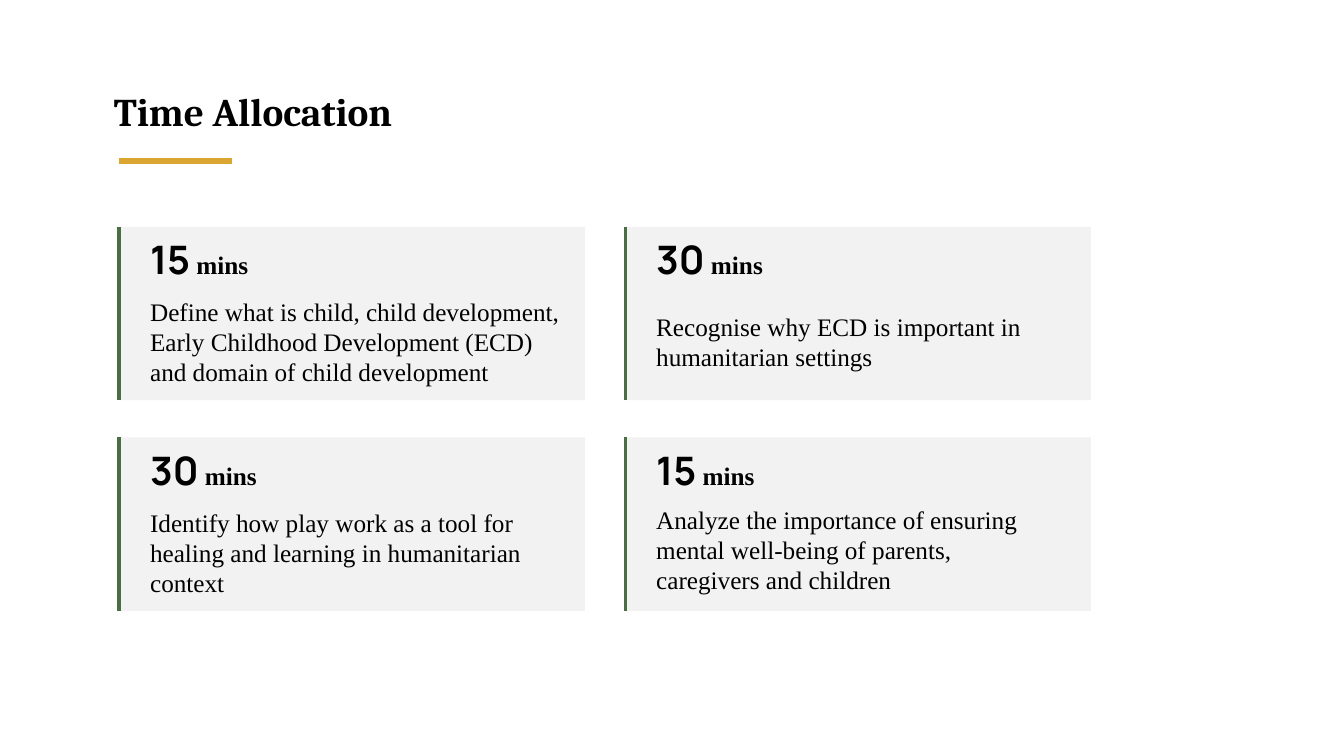
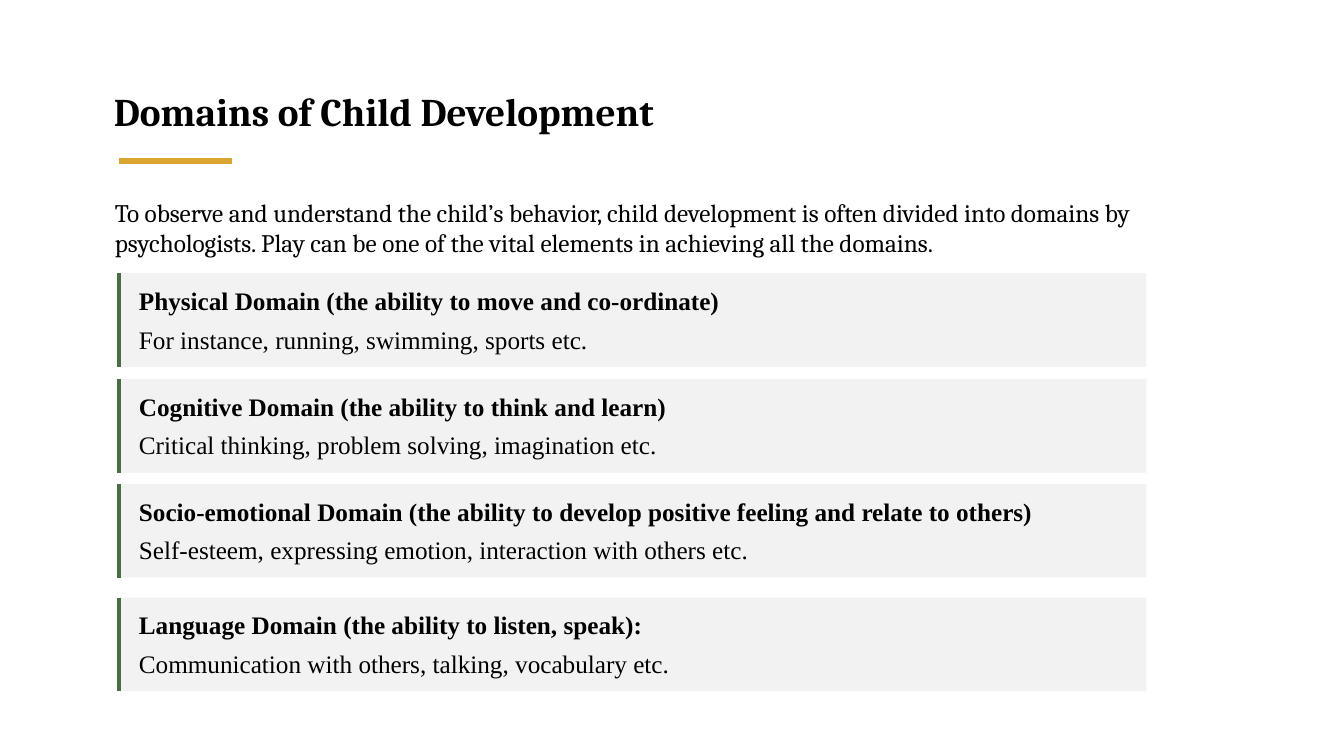
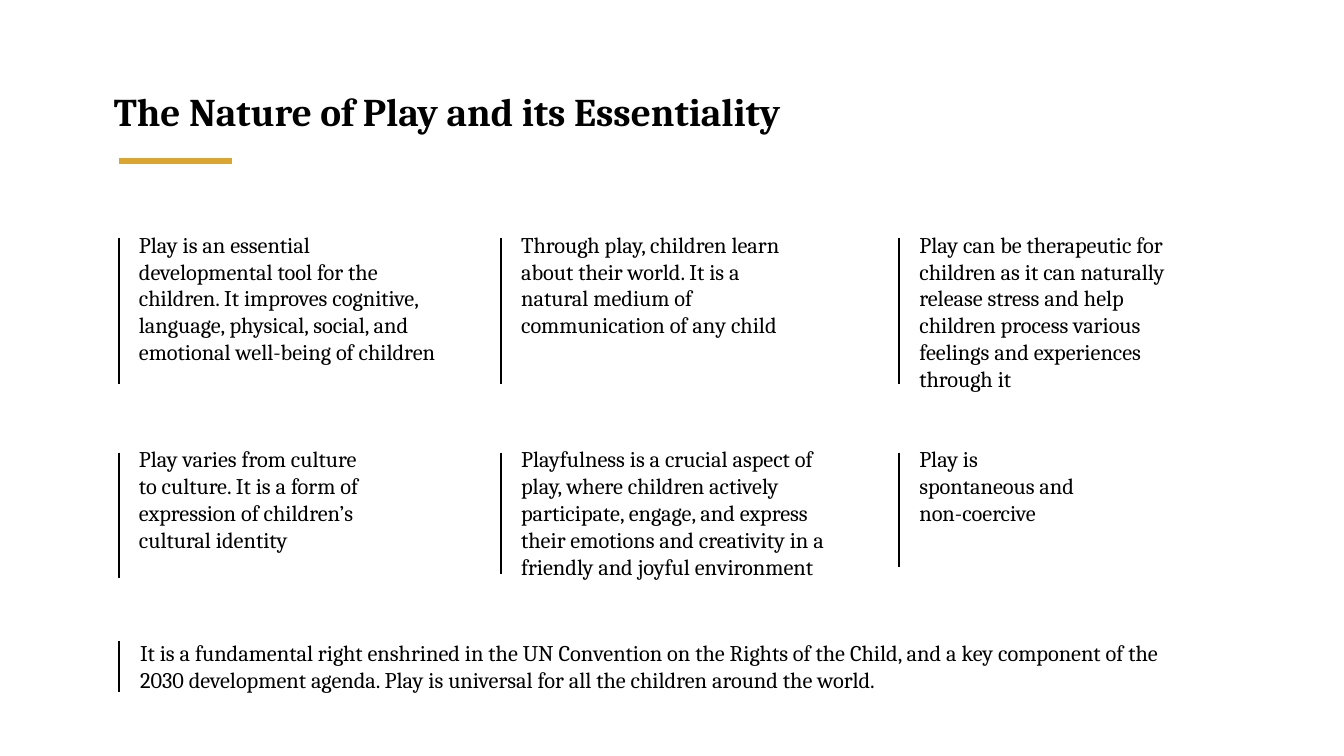
from dataclasses import dataclass

from lxml import etree
from pptx import Presentation
from pptx.dml.color import RGBColor
from pptx.enum import shapes, text
from pptx.oxml import ns
from pptx.util import Inches, Pt


@dataclass(frozen=True)
class Theme:
    ink: str = "000000"
    panel: str = "F2F2F2"
    green: str = "4A6E44"
    gold: str = "DAA531"
    serif: str = "Cambria"
    body: str = "Times New Roman"
    number: str = "Manrope"
    title_size: float = 28
    body_size: float = 18
    note_size: float = 16
    gold_width: float = 4.5
    edge_width: float = 2.25
    rule_width: float = 1.5
    left: float = 1.18


T = Theme()

ALLOCATIONS = [  # minutes, task, text offset in card, text width, text height
    ("15", "Define what is child, child development, Early Childhood "
     "Development (ECD) and domain of child development", 0.64, 4.41, 1.01),
    ("30", "Recognise why ECD is important in humanitarian settings",
     0.79, 4.41, 0.71),
    ("30", "Identify how play work as a tool for healing and learning in "
     "humanitarian context", 0.64, 4.41, 1.01),
    ("15", "Analyze the importance of ensuring mental well-being of parents, "
     "caregivers and children", 0.61, 4.15, 1.01),
]

DOMAINS = [  # top, text width, heading, examples
    (2.71, 6.12, "Physical Domain (the ability to move and co-ordinate)",
     "For instance, running, swimming, sports etc."),
    (3.76, 9.83, "Cognitive Domain (the ability to think and learn)",
     "Critical thinking, problem solving, imagination etc."),
    (4.8, 9.83, "Socio-emotional Domain (the ability to develop positive "
     "feeling and relate to others)",
     "Self-esteem, expressing emotion, interaction with others etc."),
    (5.93, 9.83, "Language Domain (the ability to listen, speak):",
     "Communication with others, talking, vocabulary etc."),
]

PLAY_NOTES = [  # rule height, text width, text height, note
    (1.45, 3.14, 1.82, "Play is an essential developmental tool for the "
     "children. It improves cognitive, language, physical, social, and "
     "emotional well-being of children"),
    (1.45, 3.02, 1.28, "Through play, children learn about their world. It is "
     "a natural medium of communication of any child"),
    (1.45, 3.02, 1.82, "Play can be therapeutic for children as it can "
     "naturally release stress and help children process various feelings "
     "and experiences through it"),
    (1.24, 2.41, 1.55, "Play varies from culture to culture. It is a form of "
     "expression of children’s cultural identity"),
    (1.2, 3.51, 1.55, "Playfulness is a crucial aspect of play, where children "
     "actively participate, engage, and express their emotions and "
     "creativity in a friendly and joyful environment"),
    (1.14, 1.93, 1.01, "Play is spontaneous and non-coercive"),
]


def add_run(p, words, font=T.body, size=T.body_size, bold=False, color=T.ink):
    r = p.add_run()
    r.text = words
    r.font.name = font
    r.font.size = Pt(size)
    r.font.bold = bold
    r.font.color.rgb = RGBColor.from_string(color)


def prepare_frame(tf, inset=0.05):
    tf.word_wrap = True
    tf.auto_size = text.MSO_AUTO_SIZE.SHAPE_TO_FIT_TEXT
    tf.vertical_anchor = text.MSO_ANCHOR.TOP
    tf.margin_left = tf.margin_right = Inches(0.1)
    tf.margin_top = tf.margin_bottom = Inches(inset)
    return tf.paragraphs[0]


def add_box(slide, left, top, width, height, inset=0.05):
    """Add an empty text box and return its text frame."""
    sp = slide.shapes.add_textbox(*map(Inches, (left, top, width, height)))
    prepare_frame(sp.text_frame, inset)
    return sp.text_frame


def add_line(slide, x1, y1, x2, y2, color, width):
    line = slide.shapes.add_connector(
        shapes.MSO_CONNECTOR.STRAIGHT, *map(Inches, (x1, y1, x2, y2)))
    line.line.color.rgb = RGBColor.from_string(color)
    line.line.width = Pt(width)
    etree.SubElement(line._element.spPr, ns.qn("a:effectLst"))


def add_panel(slide, left, top, width, height):
    """Add a grey panel with a green left edge."""
    sp = slide.shapes.add_shape(
        shapes.MSO_SHAPE.RECTANGLE, *map(Inches, (left, top, width, height)))
    sp.shadow.inherit = False
    sp.fill.solid()
    sp.fill.fore_color.rgb = RGBColor.from_string(T.panel)
    sp.line.fill.background()
    add_line(slide, left, top, left, top + height, T.green, T.edge_width)


def add_titled_slide(prs, title):
    slide = prs.slides.add_slide(prs.slide_layouts[5])
    sp = slide.shapes.title
    sp.left, sp.top, sp.width, sp.height = map(Inches, (1.03, 0.82, 9.03, 0.57))
    p = prepare_frame(sp.text_frame)
    p.alignment = text.PP_ALIGN.LEFT
    add_run(p, title, font=T.serif, size=T.title_size, bold=True)
    add_line(slide, T.left, 1.6, T.left + 1.12, 1.6, T.gold, T.gold_width)
    return slide


def add_time_card(slide, left, top, minutes, task, offset, width, height):
    add_panel(slide, left, top, 4.62, 1.72)
    tf = add_box(slide, left + 0.21, top + offset, width, height)
    add_run(tf.paragraphs[0], task)
    p = add_box(slide, left + 0.21, top + 0.04, 1.37, 0.57).paragraphs[0]
    add_run(p, minutes, font=T.number, size=T.title_size, bold=True)
    add_run(p, " mins", bold=True)


def add_domain(slide, top, width, heading, examples):
    add_panel(slide, T.left, top, 10.19, 0.93)
    tf = add_box(slide, T.left + 0.1, top + 0.07, width, 0.79)
    add_run(tf.paragraphs[0], heading, bold=True)
    p = tf.add_paragraph()
    p.space_before = Pt(6)
    add_run(p, examples)


def add_note(slide, left, top, rule, width, height, note, dx=0.1, rise=0.17):
    """Add a note whose text starts dx right of and rise above its rule."""
    add_line(slide, left, top, left, top + rule, T.ink, T.rule_width)
    tf = add_box(slide, left + dx, top - rise, width, height, inset=0.1)
    add_run(tf.paragraphs[0], note, font=T.serif, size=T.note_size)


def build_time_allocation(prs):
    slide = add_titled_slide(prs, "Time Allocation")
    for i, card in enumerate(ALLOCATIONS):
        row, col = divmod(i, 2)
        add_time_card(slide, T.left + 5.02 * col, 2.25 + 2.09 * row, *card)


def build_domains(prs):
    slide = add_titled_slide(prs, "Domains of Child Development")
    tf = add_box(slide, 1.04, 1.91, 10.44, 0.71)
    add_run(tf.paragraphs[0],
            "To observe and understand the child’s behavior, child development "
            "is often divided into domains by psychologists. Play can be one "
            "of the vital elements in achieving all the domains.",
            font=T.serif)
    for domain in DOMAINS:
        add_domain(slide, *domain)


def build_nature_of_play(prs):
    slide = add_titled_slide(prs, "The Nature of Play and its Essentiality")
    columns = (T.left, 4.97, 8.92)
    for i, note in enumerate(PLAY_NOTES):
        row, col = divmod(i, len(columns))
        add_note(slide, columns[col], 2.36 + 2.13 * row, *note)
    add_note(slide, T.left, 6.36, 0.51, 10.75, 0.74,
             "It is a fundamental right enshrined in the UN Convention on the "
             "Rights of the Child, and a key component of the 2030 development "
             "agenda. Play is universal for all the children around the world.",
             dx=0.11, rise=0.12)


def main():
    prs = Presentation()
    prs.slide_width, prs.slide_height = Inches(13.33), Inches(7.5)
    build_time_allocation(prs)
    build_domains(prs)
    build_nature_of_play(prs)
    prs.save("out.pptx")


if __name__ == "__main__":
    main()
